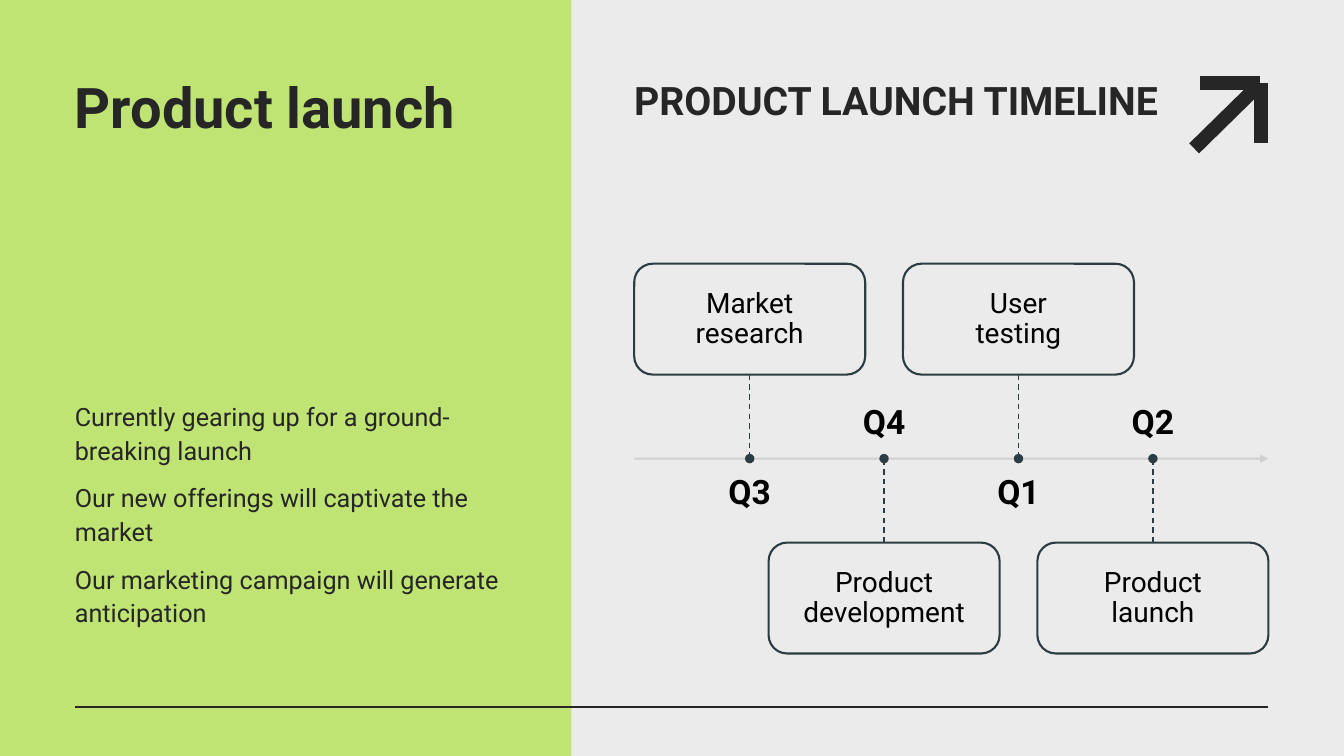
from lxml import etree
from pptx import Presentation
from pptx.dml.color import RGBColor
from pptx.enum.dml import MSO_LINE
from pptx.enum.shapes import MSO_CONNECTOR, MSO_SHAPE
from pptx.enum.text import MSO_ANCHOR as ANCHOR, PP_ALIGN as ALIGN
from pptx.oxml.ns import qn
from pptx.util import Pt

# Content
TITLE = "Product launch"
HEADING = "PRODUCT LAUNCH TIMELINE"
POINTS = [
    "Currently gearing up for a ground-breaking launch",
    "Our new offerings will captivate the market",
    "Our marketing campaign will generate anticipation",
]
MILESTONES = [
    ("Q3", "Market research"),
    ("Q4", "Product development"),
    ("Q1", "User\vtesting"),
    ("Q2", "Product launch"),
]
ARROW_STROKES = [
    (856.8, 59.2, 900, 59.2),
    (900.6, 59.2, 900.6, 102.2),
    (853, 106, 896, 63.8),
]

# Style
FONT = "Roboto"
GREEN = RGBColor(0xC0, 0xE4, 0x74)
PALE = RGBColor(0xEB, 0xEB, 0xEB)
INK = RGBColor(0x26, 0x26, 0x26)
SLATE = RGBColor(0x2C, 0x3C, 0x43)
AXIS_GRAY = RGBColor(0xCD, 0xCE, 0xCF)
BLACK = RGBColor(0, 0, 0)

# Timeline geometry in points
AXIS_LEFT, AXIS_RIGHT, AXIS_Y = 453, 906, 327.6
BOX_WIDTH, BOX_HEIGHT, BOX_GAP = 165, 79.2, 60
LABEL_WIDTH, LABEL_HEIGHT, LABEL_GAP = 145, 35.2, 12
STEP = (AXIS_RIGHT - AXIS_LEFT - BOX_WIDTH) / (len(MILESTONES) - 1)
DOT = 5.2


def add_line(slide, x1, y1, x2, y2, color, width):
    line = slide.shapes.add_connector(
        MSO_CONNECTOR.STRAIGHT, Pt(x1), Pt(y1), Pt(x2), Pt(y2))
    line.line.color.rgb = color
    line.line.width = Pt(width)
    etree.SubElement(line._element.spPr, qn("a:effectLst"))
    return line


def add_shape(slide, kind, left, top, width, height, fill, outline=None):
    shape = slide.shapes.add_shape(kind, Pt(left), Pt(top), Pt(width), Pt(height))
    shape.shadow.inherit = False
    shape.fill.solid()
    shape.fill.fore_color.rgb = fill
    if outline is None:
        shape.line.fill.background()
    else:
        shape.line.color.rgb = outline
        shape.line.width = Pt(1.5)
    return shape


def write(shape, text, size, color, bold=False, align=ALIGN.LEFT,
          anchor=ANCHOR.TOP, spacing=None, before=0, inset=0):
    frame = shape.text_frame
    frame.text = text
    frame.word_wrap = True
    frame.vertical_anchor = anchor
    frame.margin_left = frame.margin_right = Pt(inset)
    frame.margin_top = frame.margin_bottom = Pt(inset)
    for paragraph in frame.paragraphs:
        paragraph.alignment = align
        paragraph.line_spacing = spacing
        paragraph.space_before = Pt(before)
        for run in paragraph.runs:
            run.font.name = FONT
            run.font.size = Pt(size)
            run.font.bold = bold
            run.font.color.rgb = color


def add_text(slide, left, top, width, height, text, size, color, **style):
    box = slide.shapes.add_textbox(Pt(left), Pt(top), Pt(width), Pt(height))
    write(box, text, size, color, **style)


def add_axis(slide):
    axis = add_line(slide, AXIS_LEFT, AXIS_Y, AXIS_RIGHT, AXIS_Y, AXIS_GRAY, 1.5)
    outline = axis.line._get_or_add_ln()
    color = outline.find(qn("a:solidFill")).find(qn("a:srgbClr"))
    etree.SubElement(color, qn("a:alpha")).set("val", "90000")
    etree.SubElement(outline, qn("a:tailEnd")).set("type", "triangle")


def add_milestone(slide, index, quarter, stage):
    # Boxes alternate above and below the axis; labels sit opposite
    center = AXIS_LEFT + BOX_WIDTH / 2 + index * STEP
    if index % 2 == 0:
        box_edge = AXIS_Y - BOX_GAP
        box_top = box_edge - BOX_HEIGHT
        label_top, label_anchor = AXIS_Y + LABEL_GAP, ANCHOR.TOP
    else:
        box_edge = box_top = AXIS_Y + BOX_GAP
        label_top, label_anchor = AXIS_Y - LABEL_GAP - LABEL_HEIGHT, ANCHOR.BOTTOM

    box = add_shape(slide, MSO_SHAPE.ROUNDED_RECTANGLE, center - BOX_WIDTH / 2,
                    box_top, BOX_WIDTH, BOX_HEIGHT, PALE, SLATE)
    write(box, stage, 20, BLACK, align=ALIGN.CENTER, anchor=ANCHOR.MIDDLE,
          spacing=0.9, inset=17.5)
    stem = add_line(slide, center, box_edge, center, AXIS_Y, SLATE, 1)
    stem.line.dash_style = MSO_LINE.DASH
    add_shape(slide, MSO_SHAPE.OVAL, center - DOT / 2, AXIS_Y - DOT / 2,
              DOT, DOT, SLATE, SLATE)
    add_text(slide, center - LABEL_WIDTH / 2, label_top, LABEL_WIDTH, LABEL_HEIGHT,
             quarter, 24, BLACK, bold=True, align=ALIGN.CENTER,
             anchor=label_anchor, spacing=0.9)


def main():
    presentation = Presentation()
    presentation.slide_width, presentation.slide_height = Pt(960), Pt(540)
    slide = presentation.slides.add_slide(presentation.slide_layouts[6])
    slide.background.fill.solid()
    slide.background.fill.fore_color.rgb = PALE

    # Corner arrow, green panel and footer rule
    for stroke in ARROW_STROKES:
        add_line(slide, *stroke, INK, 10)
    add_shape(slide, MSO_SHAPE.RECTANGLE, 0, 0, 408.2, 540, GREEN)
    add_line(slide, 53.6, 505, 906, 505, INK, 1.5)

    # Headings and body text
    add_text(slide, 53.5, 54.7, 310, 217, TITLE, 40, INK, bold=True, spacing=Pt(45))
    add_text(slide, 453, 54.7, 379, 95, HEADING, 28, INK, bold=True, before=10)
    add_text(slide, 53.5, 284.4, 310, 202, "\n".join(POINTS), 18, INK,
             spacing=Pt(24), before=10)

    # Timeline
    add_axis(slide)
    for index, (quarter, stage) in enumerate(MILESTONES):
        add_milestone(slide, index, quarter, stage)

    presentation.save("out.pptx")


if __name__ == "__main__":
    main()
